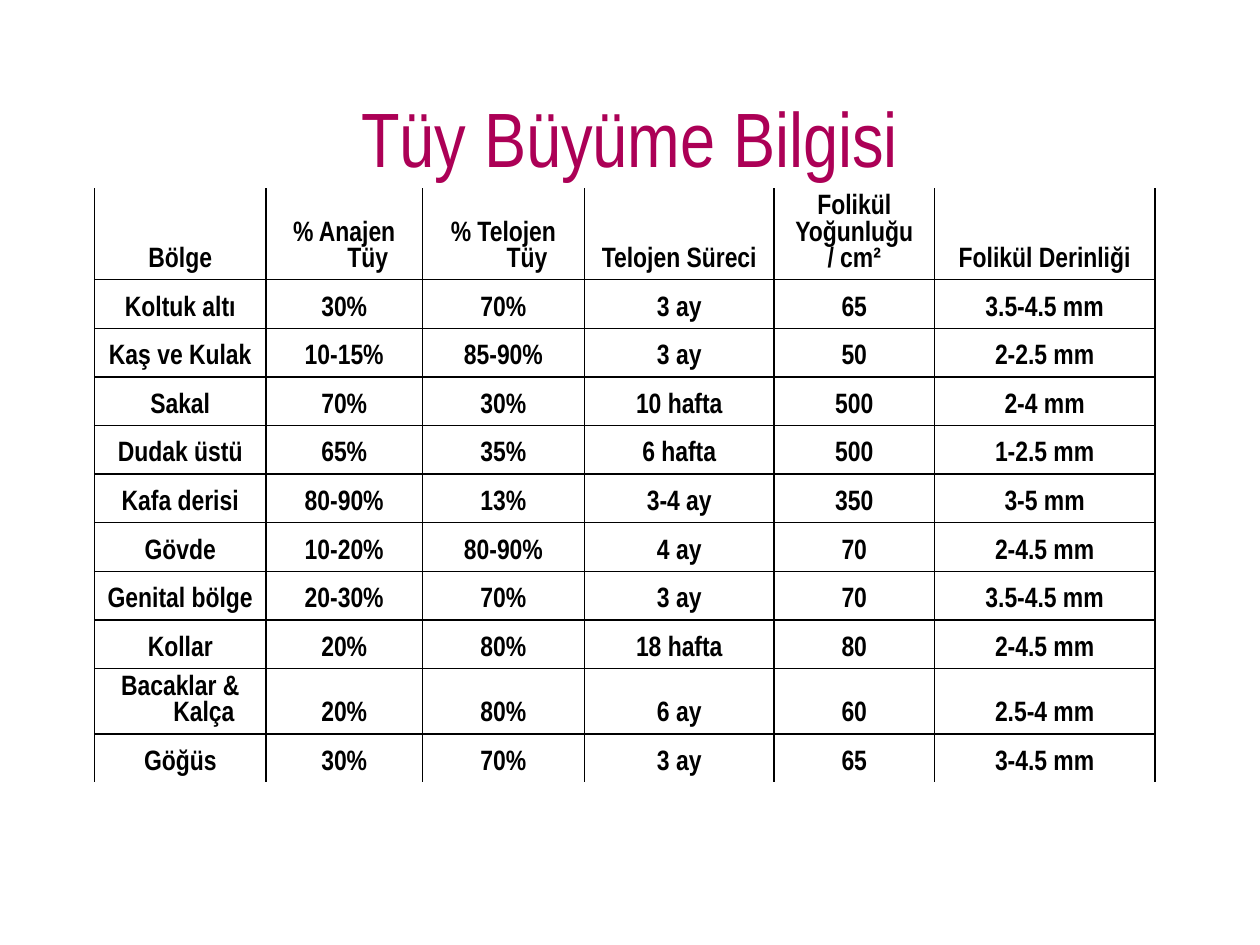
from lxml import etree
from pptx import Presentation
from pptx.dml.color import RGBColor
from pptx.enum.text import MSO_ANCHOR, PP_ALIGN
from pptx.oxml.ns import qn
from pptx.util import Pt

CENTER = PP_ALIGN.CENTER
TOP = MSO_ANCHOR.TOP
BOTTOM = MSO_ANCHOR.BOTTOM
BLACK = RGBColor(0, 0, 0)
WHITE = RGBColor(255, 255, 255)
PLUM = RGBColor(0xAC, 0x00, 0x56)

FACE = "Arial Narrow"
HEAD = {"name": FACE, "size": Pt(44), "bold": False}
BODY = {"name": FACE, "size": Pt(16), "bold": True}
HANG = Pt(27)
LINE = Pt(1)
ROW = Pt(27.8)
COLS = [98, 89.4, 92.6, 108.4, 91.6, 126]
ROWS = [
    ["Bölge", "% Anajen Tüy", "% Telojen Tüy", "Telojen Süreci",
     "Folikül\nYoğunluğu\n/ cm²", "Folikül Derinliği"],
    ["Koltuk altı", "30%", "70%", "3 ay", "65", "3.5-4.5 mm"],
    ["Kaş ve Kulak", "10-15%", "85-90%", "3 ay", "50", "2-2.5 mm"],
    ["Sakal", "70%", "30%", "10 hafta", "500", "2-4 mm"],
    ["Dudak üstü", "65%", "35%", "6 hafta", "500", "1-2.5 mm"],
    ["Kafa derisi", "80-90%", "13%", "3-4 ay", "350", "3-5 mm"],
    ["Gövde", "10-20%", "80-90%", "4 ay", "70", "2-4.5 mm"],
    ["Genital bölge", "20-30%", "70%", "3 ay", "70", "3.5-4.5 mm"],
    ["Kollar", "20%", "80%", "18 hafta", "80", "2-4.5 mm"],
    ["Bacaklar & Kalça", "20%", "80%", "6 ay", "60", "2.5-4 mm"],
    ["Göğüs", "30%", "70%", "3 ay", "65", "3-4.5 mm"],
]


def style(font, look, color):
    """Apply a dict of format values and a colour to a font."""
    for key, value in look.items():
        setattr(font, key, value)
    font.color.rgb = color


def add_title(slide, left, top, width, height):
    """Place the heading in the title placeholder."""
    title = slide.shapes.title
    box = {"left": left, "top": top, "width": width, "height": height}
    for key, value in box.items():
        setattr(title, key, value)
    frame = title.text_frame
    frame.text = "Tüy Büyüme Bilgisi"
    frame.vertical_anchor = TOP
    frame.margin_top = Pt(4)
    para = frame.paragraphs[0]
    para.alignment = CENTER
    style(para.runs[0].font, HEAD, PLUM)


def rule_cell(cell, sides):
    """Draw black lines on the named sides and clear the others."""
    props = cell._tc.get_or_add_tcPr()
    for side in "LRTB":
        line = etree.SubElement(props, qn(f"a:ln{side}"), w=str(LINE))
        if side in sides:
            fill = etree.SubElement(line, qn("a:solidFill"))
            etree.SubElement(fill, qn("a:srgbClr"), val=str(BLACK))
        else:
            etree.SubElement(line, qn("a:noFill"))


def fill_cell(cell, text, sides):
    """Write, rule and format one table cell."""
    cell.text = text
    cell.vertical_anchor = BOTTOM
    rule_cell(cell, sides)
    cell.fill.solid()
    cell.fill.fore_color.rgb = WHITE
    for para in cell.text_frame.paragraphs:
        para.alignment = CENTER
        props = para._p.get_or_add_pPr()
        props.set("marL", str(HANG))
        props.set("indent", str(-HANG))
        style(para.runs[0].font, BODY, BLACK)


def add_grid(slide, left, top, width, height):
    """Place the hair growth table, open at its top and bottom edges."""
    frame = slide.shapes.add_table(len(ROWS), len(COLS), left, top, width, height)
    table = frame.table
    table.first_row = table.horz_banding = False
    for col, size in zip(table.columns, COLS):
        col.width = Pt(size)
    last = len(ROWS) - 1
    for i, texts in enumerate(ROWS):
        table.rows[i].height = ROW
        sides = "LR" + ("T" if i else "") + ("B" if i < last else "")
        for j, text in enumerate(texts):
            fill_cell(table.cell(i, j), text, sides)


def main():
    """Build and save the slide."""
    deck = Presentation()
    deck.slide_width, deck.slide_height = Pt(720), Pt(540)
    slide = deck.slides.add_slide(deck.slide_layouts[5])
    add_title(slide, Pt(36), Pt(48), Pt(648), Pt(90))
    add_grid(slide, Pt(54), Pt(107.5), Pt(sum(COLS)), ROW * len(ROWS))
    deck.save("out.pptx")


if __name__ == "__main__":
    main()
